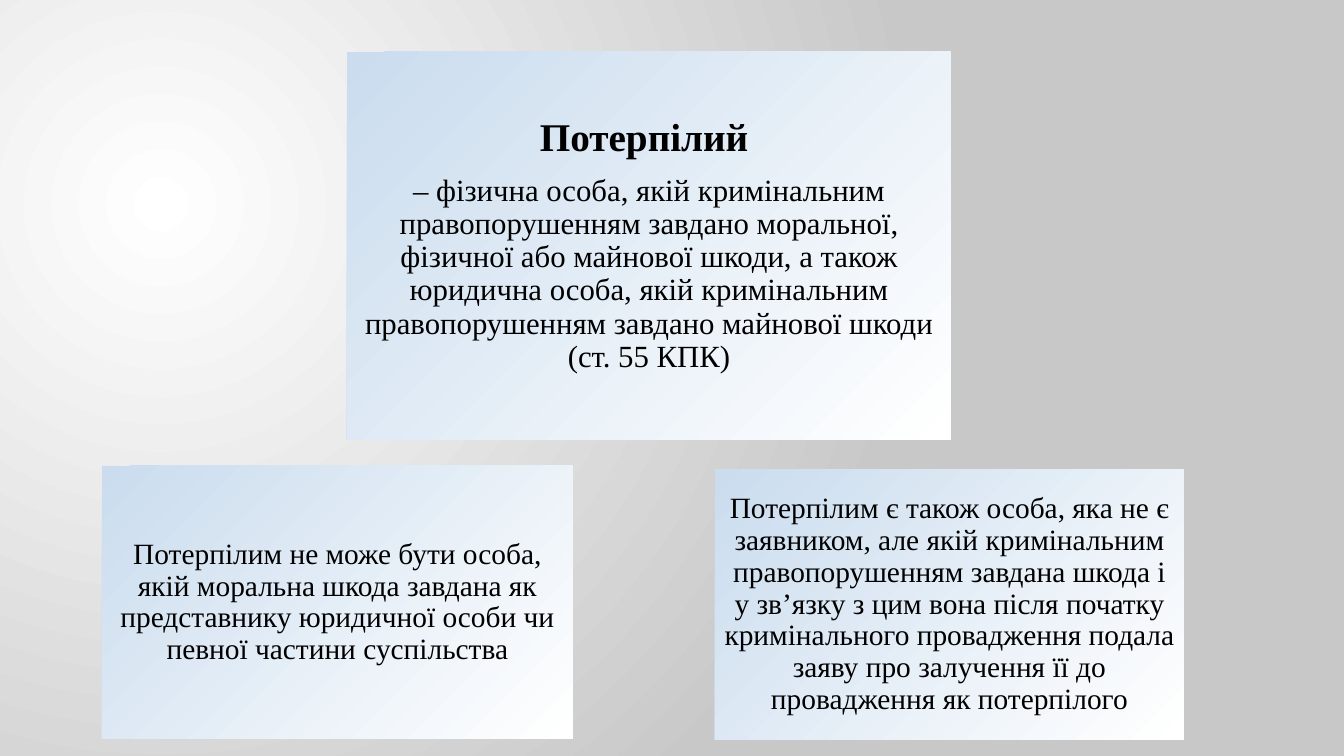
from lxml import etree
from pptx import Presentation
from pptx.dml.color import RGBColor
from pptx.enum.shapes import MSO_SHAPE as SHAPE
from pptx.enum.text import MSO_ANCHOR as ANCHOR, PP_ALIGN as ALIGN
from pptx.oxml.ns import qn
from pptx.util import Pt

PX = 914400 / 100.8


def px(n):
    return round(n * PX)


def rgb(value):
    return RGBColor.from_string(value)


class Deck:
    font = "Times New Roman"
    ink = "000000"
    card_stops = ("CADCEE", "FFFFFF")
    back_stops = ("FFFFFF", "C8C8C8")

    def __init__(self, width, height):
        self.prs = Presentation()
        self.prs.slide_width, self.prs.slide_height = px(width), px(height)
        self.s = self.prs.slides.add_slide(self.prs.slide_layouts[6])

    def gradient(self, fill, colours):
        fill.gradient()
        for i, (stop, colour) in enumerate(zip(fill.gradient_stops, colours)):
            stop.position = i
            stop.color.rgb = rgb(colour)

    def background(self, **focus):
        """Circular gradient; focus gives the centre insets in percent."""
        self.gradient(self.s.background.fill, self.back_stops)
        grad = self.s._element.find(".//" + qn("a:gradFill"))
        grad.remove(grad.find(qn("a:lin")))
        circle = etree.SubElement(grad, qn("a:path"), {"path": "circle"})
        etree.SubElement(circle, qn("a:fillToRect"),
                         {side: str(pct * 1000) for side, pct in focus.items()})

    def card(self, box, inset, paragraphs):
        """Rectangle with centred paragraphs of (text, size, bold)."""
        sp = self.s.shapes.add_shape(SHAPE.RECTANGLE, *map(px, box))
        sp.shadow.inherit = False
        sp.line.fill.background()
        self.gradient(sp.fill, self.card_stops)
        sp.fill.gradient_angle = 315
        tf = sp.text_frame
        frame = {"word_wrap": True, "vertical_anchor": ANCHOR.MIDDLE}
        for side in ("left", "top", "right", "bottom"):
            frame[f"margin_{side}"] = px(inset)
        for name, value in frame.items():
            setattr(tf, name, value)
        for i, (text, size, bold) in enumerate(paragraphs):
            p = tf.add_paragraph() if i else tf.paragraphs[0]
            layout = {"alignment": ALIGN.CENTER, "line_spacing": 0.9,
                      "space_after": Pt(round(size * 0.35))}
            for name, value in layout.items():
                setattr(p, name, value)
            r = p.add_run()
            r.text = text
            style = {"name": self.font, "size": Pt(size), "bold": bold}
            for name, value in style.items():
                setattr(r.font, name, value)
            r.font.color.rgb = rgb(self.ink)


def main():
    deck = Deck(1344, 756)
    deck.background(l=50, t=55, r=125, b=100)

    # Definition
    deck.card((347, 52, 604, 388), 12, [
        ("Потерпілий ", 28, True),
        ("– фізична особа, якій кримінальним правопорушенням завдано "
         "моральної, фізичної або майнової шкоди, а також юридична особа, "
         "якій кримінальним правопорушенням завдано майнової шкоди "
         "(ст. 55 КПК)", 22, False),
    ])

    # Who cannot be a victim
    deck.card((102, 466, 471, 273), 9, [
        ("Потерпілим не може бути особа, якій моральна шкода завдана як "
         "представнику юридичної особи чи певної частини суспільства",
         21, False),
    ])

    # Who is also a victim
    deck.card((715, 469, 469, 271), 9, [
        ("Потерпілим є також особа, яка не є заявником, але якій "
         "кримінальним правопорушенням завдана шкода і у зв’язку з цим вона "
         "після початку кримінального провадження подала заяву про залучення "
         "її до провадження як потерпілого", 21, False),
    ])

    deck.prs.save("out.pptx")


if __name__ == "__main__":
    main()
